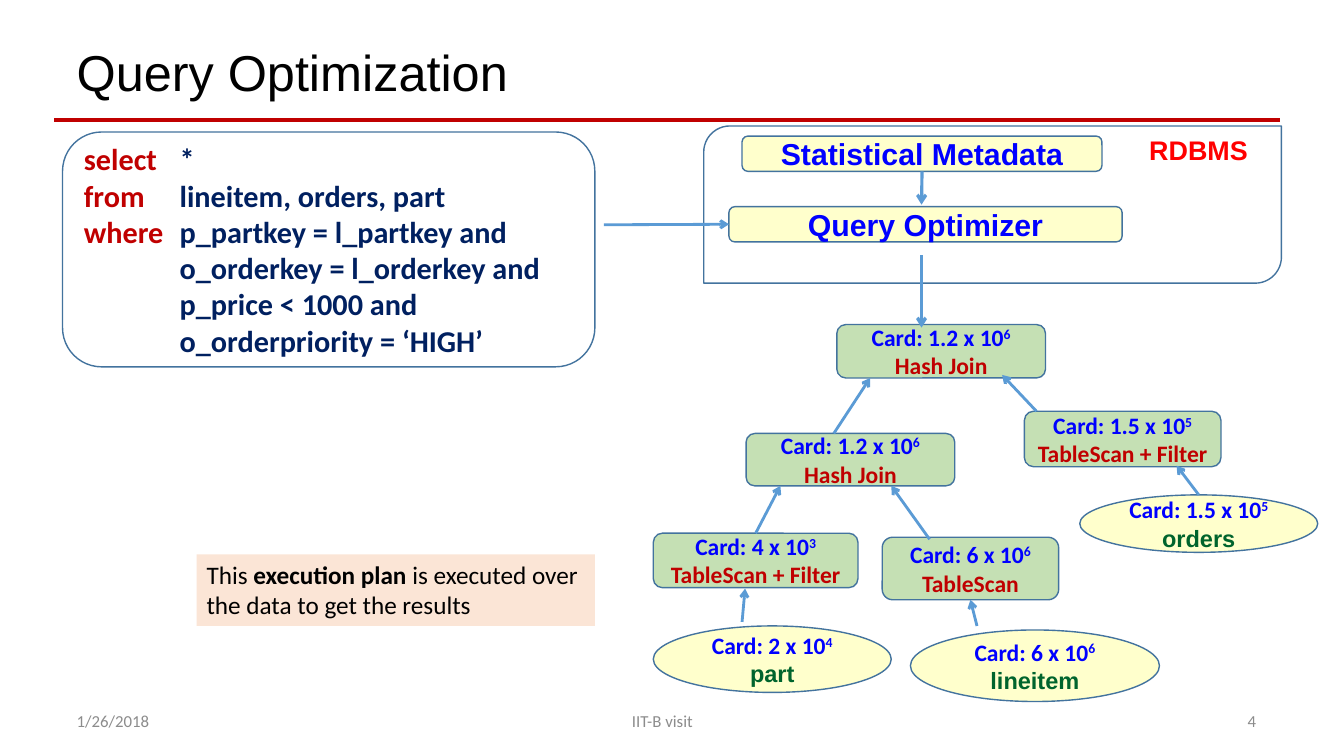
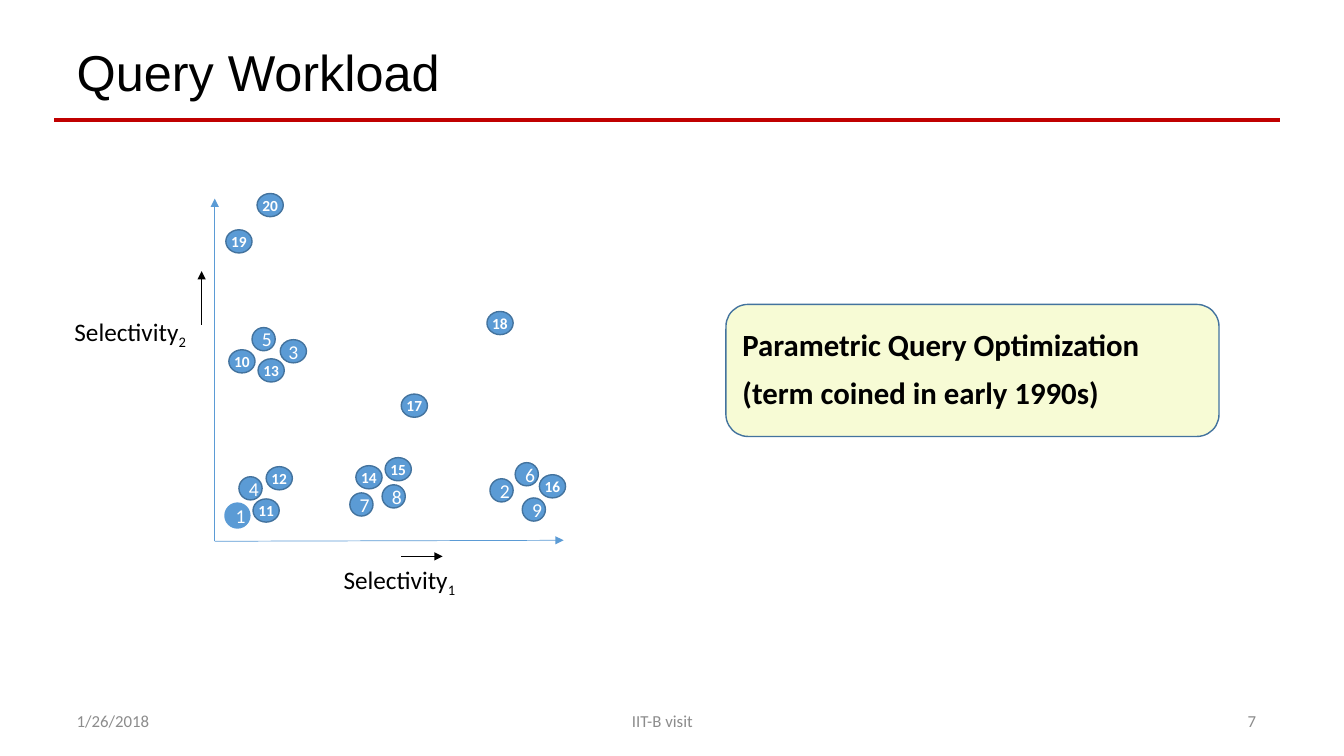
from copy import deepcopy

from lxml import etree
from pptx import Presentation
from pptx.dml.color import RGBColor
from pptx.enum import shapes as kinds, text as styles
from pptx.oxml.ns import qn
from pptx.util import Inches, Pt

# Colours
RED = RGBColor(0xC0, 0x00, 0x00)
BRIGHT_RED = RGBColor(0xFF, 0x00, 0x00)
BLUE = RGBColor(0x00, 0x00, 0xFF)
NAVY = RGBColor(0x00, 0x20, 0x60)
GREEN = RGBColor(0x00, 0x64, 0x2D)
BLACK = RGBColor(0x00, 0x00, 0x00)
WHITE = RGBColor(0xFF, 0xFF, 0xFF)
GREY = RGBColor(0x8C, 0x8C, 0x8C)
OUTLINE = RGBColor(0x43, 0x73, 0x9E)
ACCENT = RGBColor(0x5B, 0x9B, 0xD5)
YELLOW = RGBColor(0xFF, 0xFF, 0xCC)
PALE_GREEN = RGBColor(0xC5, 0xE0, 0xB4)
PEACH = RGBColor(0xFB, 0xE5, 0xD6)
LIME = RGBColor(0xF7, 0xFB, 0xD5)

LEFT, CENTER, RIGHT = styles.PP_ALIGN.LEFT, styles.PP_ALIGN.CENTER, styles.PP_ALIGN.RIGHT
MIDDLE, TOP = styles.MSO_ANCHOR.MIDDLE, styles.MSO_ANCHOR.TOP
SHAPE = kinds.MSO_SHAPE
TOP_SIDE, LEFT_SIDE, BOTTOM_SIDE = 0, 1, 2

# Shared frame
TITLE_BOX = (0.66, 0.4, 11.87, 0.7)
RULE = ((0.54, 1.19), (12.7, 1.19))
DATE, VENUE = "1/26/2018", "IIT-B visit"
FOOTER_BOXES = [((0.66, 6.95, 3, 0.4), LEFT),
                ((4.32, 6.95, 4.5, 0.4), CENTER),
                ((9.56, 6.95, 3, 0.4), RIGHT)]

# Query Optimization content
QUERY_BOX = (0.62, 1.31, 5.28, 2.33)
QUERY_COLUMN = 0.95
QUERY = [("select", "*"),
         ("from", "lineitem, orders, part"),
         ("where", "p_partkey = l_partkey and"),
         ("", "o_orderkey = l_orderkey and"),
         ("", "p_price < 1000 and"),
         ("", "o_orderpriority = ‘HIGH’")]
ENGINE_BOX = (6.98, 1.25, 5.73, 1.56)
ENGINE_PARTS = {"metadata": ("Statistical Metadata", (7.36, 1.35, 3.57, 0.35)),
                "optimizer": ("Query Optimizer", (7.23, 2.05, 3.9, 0.35))}
# name: (cardinality, exponent, operator, box)
OPERATORS = {
    "top join": ("1.2", "6", "Hash Join", (8.3, 3.22, 2.07, 0.53)),
    "lower join": ("1.2", "6", "Hash Join", (7.4, 4.3, 2.07, 0.52)),
    "orders scan": ("1.5", "5", "TableScan + Filter", (10.16, 4.08, 1.95, 0.55)),
    "part scan": ("4", "3", "TableScan + Filter", (6.48, 5.29, 2.03, 0.54)),
    "lineitem scan": ("6", "6", "TableScan", (8.75, 5.33, 1.75, 0.62)),
}
TABLES = {
    "orders": ("1.5", "5", "orders", (10.71, 4.91, 2.36, 0.57)),
    "part": ("2", "4", "part", (6.48, 6.21, 2.36, 0.66)),
    "lineitem": ("6", "6", "lineitem", (9.03, 6.25, 2.47, 0.71)),
}
# Each end is a point or a (part, side) pair
PLAN_ARROWS = [
    ((5.99, 2.23), ("optimizer", LEFT_SIDE), 2),
    (("metadata", BOTTOM_SIDE), (9.14, 2.03), 2.25),
    ((9.14, 2.53), (9.14, 3.25), 2.25),
    ((8.27, 4.3), (8.63, 3.75), 2),
    ((10.28, 4.08), (9.94, 3.72), 2),
    (("part scan", TOP_SIDE), (7.74, 4.82), 2),
    ((9.22, 5.35), (8.84, 4.82), 2),
    (("orders", TOP_SIDE), (11.67, 4.62), 2),
    ((7.36, 6.17), (7.39, 5.84), 2),
    ((9.69, 6.21), ("lineitem scan", BOTTOM_SIDE), 2),
]
RESULT_NOTE = [["This ", ("execution plan", {"bold": True}), " is executed over"],
               ["the data to get the results"]]

# Query Workload content: query number and top left corner of its dot
QUERIES = [(1, 2.24, 5), (7, 3.47, 4.89), (13, 2.56, 3.56), (4, 2.37, 4.73),
           (5, 2.5, 3.25), (6, 5.11, 4.59), (2, 4.86, 4.75), (8, 3.79, 4.81),
           (9, 5.18, 4.94), (10, 2.27, 3.47), (11, 2.51, 4.95), (12, 2.64, 4.63),
           (3, 2.78, 3.37), (14, 3.53, 4.62), (15, 3.82, 4.54), (16, 5.35, 4.71),
           (17, 3.98, 3.91), (18, 4.83, 3.09), (19, 2.24, 2.28), (20, 2.55, 1.92)]
ORIGIN = (2.13, 5.37)
AXIS_ENDS = [(5.59, 5.36), (2.13, 1.97)]
# Axis number, label box, direction arrow
AXIS_LABELS = [("1", (3.31, 5.55, 1.33, 0.4), (3.98, 5.52), (4.39, 5.52)),
               ("2", (0.64, 3.09, 1.33, 0.4), (2, 3.22), (2, 2.69))]
TERM_BOX = (7.2, 3.02, 4.89, 1.31)
TERM = [["Parametric Query Optimization"], ["(term coined in early 1990s)"]]


def inches(values):
    return [Inches(value) for value in values]


def write(part, paragraphs, align=LEFT, anchor=MIDDLE, wrap=True, inset=None,
          spacing=None, before=None, **base):
    """Fill a part; a run is a string or (string, format changes)."""
    frame = part.text_frame
    frame.auto_size = styles.MSO_AUTO_SIZE.NONE
    frame.word_wrap, frame.vertical_anchor = wrap, anchor
    if inset is not None:
        frame.margin_left = frame.margin_right = Inches(inset)
        frame.margin_top = frame.margin_bottom = Inches(inset)
    for number, runs in enumerate(paragraphs):
        paragraph = frame.add_paragraph() if number else frame.paragraphs[0]
        paragraph.alignment = align
        if spacing:
            paragraph.line_spacing = spacing
        if before is not None:
            paragraph.space_before = Pt(before)
        for item in runs:
            words, changes = (item, {}) if isinstance(item, str) else item
            look = {"font": "Calibri", "color": BLACK, "bold": False, **base, **changes}
            run = paragraph.add_run()
            run.text = words
            run.font.name, run.font.size = look["font"], Pt(look["size"])
            run.font.bold, run.font.color.rgb = look["bold"], look["color"]
            if "raised" in look:
                run.font._element.set("baseline", str(look["raised"] * 1000))


def paint(part, fill=None, line=OUTLINE, width=1):
    if fill is None:
        part.fill.background()
    else:
        part.fill.solid()
        part.fill.fore_color.rgb = fill
    if line is None:
        part.line.fill.background()
    else:
        part.line.color.rgb, part.line.width = line, Pt(width)


def add_box(shapes, kind, box, **look):
    part = shapes.add_shape(kind, *inches(box))
    part.shadow.inherit = False
    paint(part, **look)
    return part


def add_label(slide, box, paragraphs, **look):
    label = slide.shapes.add_textbox(*inches(box))
    write(label, paragraphs, anchor=TOP, **look)


def add_line(shapes, start, end, color=ACCENT, width=2.0, head=None, parts=None):
    joins = [point if isinstance(point[0], str) else None for point in (start, end)]
    places = [(0, 0) if join else point for join, point in zip(joins, (start, end))]
    line = shapes.add_connector(kinds.MSO_CONNECTOR.STRAIGHT,
                                *inches(places[0] + places[1]))
    for join, connect in zip(joins, (line.begin_connect, line.end_connect)):
        if join:
            connect(parts[join[0]], join[1])
    line.line.color.rgb, line.line.width = color, Pt(width)
    if head:
        etree.SubElement(line.line._ln, qn("a:tailEnd"), type=head)
    etree.SubElement(line.element.spPr, qn("a:effectLst"))
    return line


def place(part, box):
    part.left, part.top, part.width, part.height = inches(box)


def add_slide(prs, layout, title, number):
    slide = prs.slides.add_slide(layout)
    place(slide.shapes.title, TITLE_BOX)
    write(slide.shapes.title, [[title]], size=36, font="Arial", spacing=0.9)
    # Footer placeholders come from the layout
    holders = [holder for holder in layout.placeholders
               if holder.placeholder_format.idx in (10, 11, 12)]
    for holder in holders:
        slide.shapes.element.append(deepcopy(holder.element))
    footers = [part for part in slide.placeholders if part.placeholder_format.idx >= 10]
    footers.sort(key=lambda part: part.placeholder_format.idx)
    for footer, words, (box, align) in zip(footers, (DATE, VENUE, str(number)), FOOTER_BOXES):
        place(footer, box)
        footer.text_frame.clear()
        for field in footer.text_frame.paragraphs[0]._p.findall(qn("a:fld")):
            field.getparent().remove(field)
        write(footer, [[words]], align=align, size=12, color=GREY)
    return slide


def add_master_rule(prs, slide):
    rule = add_line(slide.shapes, *RULE, color=RED, width=3)
    rule.element.nvCxnSpPr.cNvPr.set("id", "20")
    prs.slide_master.shapes.element.append(rule.element)


def build_optimization(slide):
    shapes = slide.shapes
    # Query text, aligned on one tab stop
    query = add_box(shapes, SHAPE.ROUNDED_RECTANGLE, QUERY_BOX)
    lines = [[(keyword, {"color": RED}), "\t" + clause] if keyword else ["\t" + clause]
             for keyword, clause in QUERY]
    write(query, lines, size=21.6, color=NAVY, bold=True)
    for paragraph in query.text_frame.paragraphs:
        tabs = etree.SubElement(paragraph._p.get_or_add_pPr(), qn("a:tabLst"))
        etree.SubElement(tabs, qn("a:tab"), pos=str(Inches(QUERY_COLUMN)), algn="l")

    # Database engine
    add_box(shapes, SHAPE.ROUND_2_DIAG_RECTANGLE, ENGINE_BOX)
    add_label(slide, (11.3, 1.28, 2, 0.42), [["RDBMS"]], size=19.2, font="Arial",
              color=BRIGHT_RED, bold=True)
    parts = {}
    for name, (words, box) in ENGINE_PARTS.items():
        parts[name] = add_box(shapes, SHAPE.ROUNDED_RECTANGLE, box, fill=YELLOW)
        write(parts[name], [[words]], align=CENTER, size=21.6, font="Arial",
              color=BLUE, bold=True)

    # Execution plan
    for nodes, kind, fill, caption in (
            (OPERATORS, SHAPE.ROUNDED_RECTANGLE, PALE_GREEN, {"color": RED}),
            (TABLES, SHAPE.OVAL, YELLOW, {"color": GREEN, "font": "Arial"})):
        for name, (count, exponent, words, box) in nodes.items():
            parts[name] = add_box(shapes, kind, box, fill=fill)
            write(parts[name], [[f"Card: {count} x 10", (exponent, {"raised": 30})],
                                [(words, caption)]],
                  align=CENTER, size=16.8, color=BLUE, bold=True)
    for start, end, width in PLAN_ARROWS:
        add_line(shapes, start, end, width=width, head="arrow", parts=parts)

    note = add_box(shapes, SHAPE.RECTANGLE, (1.95, 5.5, 3.95, 0.71), fill=PEACH, line=None)
    write(note, RESULT_NOTE, anchor=TOP, wrap=False, size=18)


def build_workload(slide):
    # Selectivity plot
    plot = slide.shapes.add_group_shape().shapes
    for end in AXIS_ENDS:
        add_line(plot, ORIGIN, end, width=0.5, head="triangle")
    for number, left, top in QUERIES:
        wide = number >= 10 or number == 3
        edge = {"line": ACCENT, "width": 2.25} if number == 1 else {}
        dot = add_box(plot, SHAPE.OVAL, (left, top, 0.26 if wide else 0.23, 0.23),
                      fill=ACCENT, **edge)
        write(dot, [[str(number)]], align=CENTER, inset=0 if wide else None,
              size=11 if number >= 10 else 14, bold=number >= 10, color=WHITE)
    for axis, box, start, end in AXIS_LABELS:
        add_label(slide, box, [["Selectivity", (axis, {"raised": -25})]], wrap=False, size=18)
        add_line(slide.shapes, start, end, color=BLACK, width=0.5, head="triangle")

    # Term in the body placeholder
    term = slide.placeholders[1]
    place(term, TERM_BOX)
    outline = etree.SubElement(term.element.spPr, qn("a:prstGeom"), prst="roundRect")
    etree.SubElement(outline, qn("a:avLst"))
    paint(term, fill=LIME)
    write(term, TERM, size=22, bold=True, spacing=0.9, before=10)
    for paragraph in term.text_frame.paragraphs:
        properties = paragraph._p.get_or_add_pPr()
        properties.set("marL", "0")
        properties.set("indent", "0")
        etree.SubElement(properties, qn("a:buNone"))


def main():
    prs = Presentation()
    prs.slide_width, prs.slide_height = inches((13.33, 7.5))
    optimization = add_slide(prs, prs.slide_layouts[5], "Query Optimization", 4)
    add_master_rule(prs, optimization)
    build_optimization(optimization)
    build_workload(add_slide(prs, prs.slide_layouts[1], "Query Workload", 7))
    prs.save("out.pptx")


if __name__ == "__main__":
    main()
